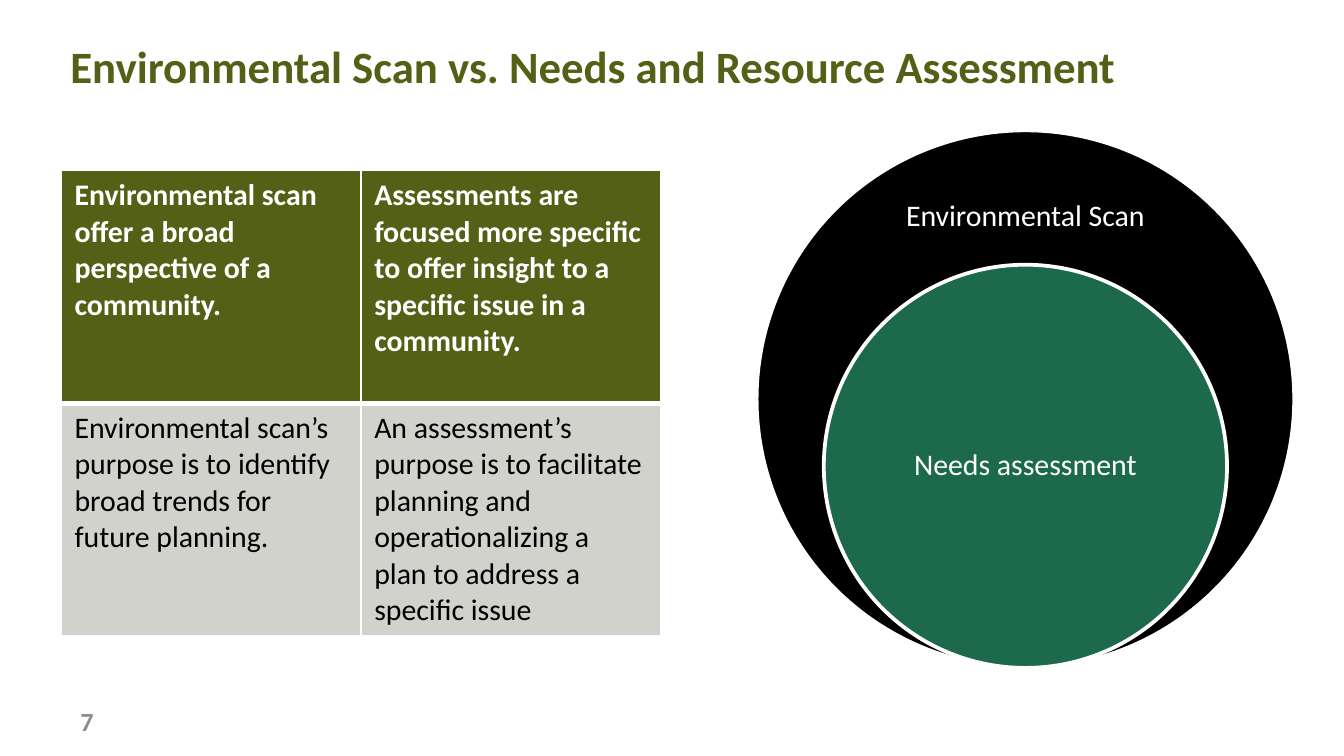
from math import sqrt

from lxml.etree import SubElement
from pptx import Presentation
from pptx.dml.color import RGBColor
from pptx.enum.shapes import MSO_SHAPE
from pptx.enum.text import MSO_ANCHOR, PP_ALIGN
from pptx.oxml.ns import qn
from pptx.util import Inches, Pt

TITLE = "Environmental Scan vs. Needs and Resource Assessment"
PAGE = "7"
ROWS = [
    ("Environmental scan offer a broad perspective of a community.",
     "Assessments are focused more specific to offer insight to a specific issue in a community."),
    ("Environmental scan’s purpose is to identify broad trends for future planning.",
     "An assessment’s purpose is to facilitate planning and operationalizing a plan to address a specific issue"),
]
CIRCLES = [("Environmental Scan", "black", 1), ("Needs assessment", "green", 0.75)]

THEME = {
    "font": "Calibri",
    "colors": {"olive": "546015", "green": "1C694C", "stone": "D1D2CC",
               "gray": "8C8C8C", "black": "000000", "white": "FFFFFF"},
    "text": {
        "title": {"size": 24, "bold": True, "color": "olive"},
        "header": {"size": 16, "bold": True, "color": "white"},
        "body": {"size": 16, "bold": False, "color": "black"},
        "label": {"size": 16, "bold": False, "color": "white"},
        "page": {"size": 14, "bold": True, "color": "gray"},
    },
    "ring": 2,
}
LABEL_FORMAT = {"margin_left": Inches(0.12), "margin_right": Inches(0.12),
                "margin_top": Inches(0.12), "margin_bottom": Inches(0.12)}

prs = Presentation()
prs.slide_width = Inches(10)
prs.slide_height = prs.slide_width * 9 // 16
s = prs.slides.add_slide(prs.slide_layouts[6])
UNIT = prs.slide_width / 100


def box(*shares):
    return [round(v * UNIT) for v in shares]


def color(name):
    return RGBColor.from_string(THEME["colors"][name])


def write(tf, text, style, **para):
    look = THEME["text"][style]
    p = tf.paragraphs[0]
    for key, value in para.items():
        setattr(p, key, value)
    r = p.add_run()
    r.text = text
    font = {"name": THEME["font"], "size": Pt(look["size"]), "bold": look["bold"]}
    for key, value in font.items():
        setattr(r.font, key, value)
    r.font.color.rgb = color(look["color"])


def add_text(area, text, style, frame=None, **para):
    tf = s.shapes.add_textbox(*box(*area)).text_frame
    settings = {"word_wrap": True, "vertical_anchor": MSO_ANCHOR.MIDDLE, **(frame or {})}
    for key, value in settings.items():
        setattr(tf, key, value)
    write(tf, text, style, **para)


def add_borders(cell, widths):
    props = cell._tc.get_or_add_tcPr()
    for side, width in widths.items():
        ln = SubElement(props, qn(f"a:ln{side}"), w=str(Pt(width)))
        fill = SubElement(ln, qn("a:solidFill"))
        SubElement(fill, qn("a:srgbClr"), val=THEME["colors"]["white"])


def add_circles(left, top, size):
    for i, (label, fill, share) in enumerate(CIRCLES):
        d = size * share
        x, y = left + (size - d) / 2, top + size - d
        sp = s.shapes.add_shape(MSO_SHAPE.OVAL, *box(x, y, d, d))
        sp.shadow.inherit = False
        sp.fill.solid()
        sp.fill.fore_color.rgb = color(fill)
        sp.line.color.rgb = color("white")
        sp.line.width = Pt(THEME["ring"])
        if i == len(CIRCLES) - 1:
            w, h = d / sqrt(2), d / 2
            label_top = y + d / 4
        else:
            w, h = 21, 6.8
            label_top = y + 3
        add_text((x + (d - w) / 2, label_top, w, h), label, "label",
                 LABEL_FORMAT, alignment=PP_ALIGN.CENTER, line_spacing=0.9)


def add_comparison(area):
    table = s.shapes.add_table(len(ROWS), len(ROWS[0]), *box(*area)).table
    for i, texts in enumerate(ROWS):
        head = i == 0
        for j, text in enumerate(texts):
            cell = table.cell(i, j)
            write(cell.text_frame, text, "header" if head else "body")
            add_borders(cell, {"L": 1, "R": 1, "T": 1 if head else 3, "B": 3 if head else 1})
            cell.fill.solid()
            cell.fill.fore_color.rgb = color("olive" if head else "stone")


add_circles(56.3, 9.7, 40)
add_text((5, 52.15, 22.5, 3), PAGE, "page")
add_text((4.25, 2.3, 91.5, 5.2), TITLE, "title")
add_comparison((4.55, 12.7, 44.6, 34.6))

prs.save("out.pptx")
